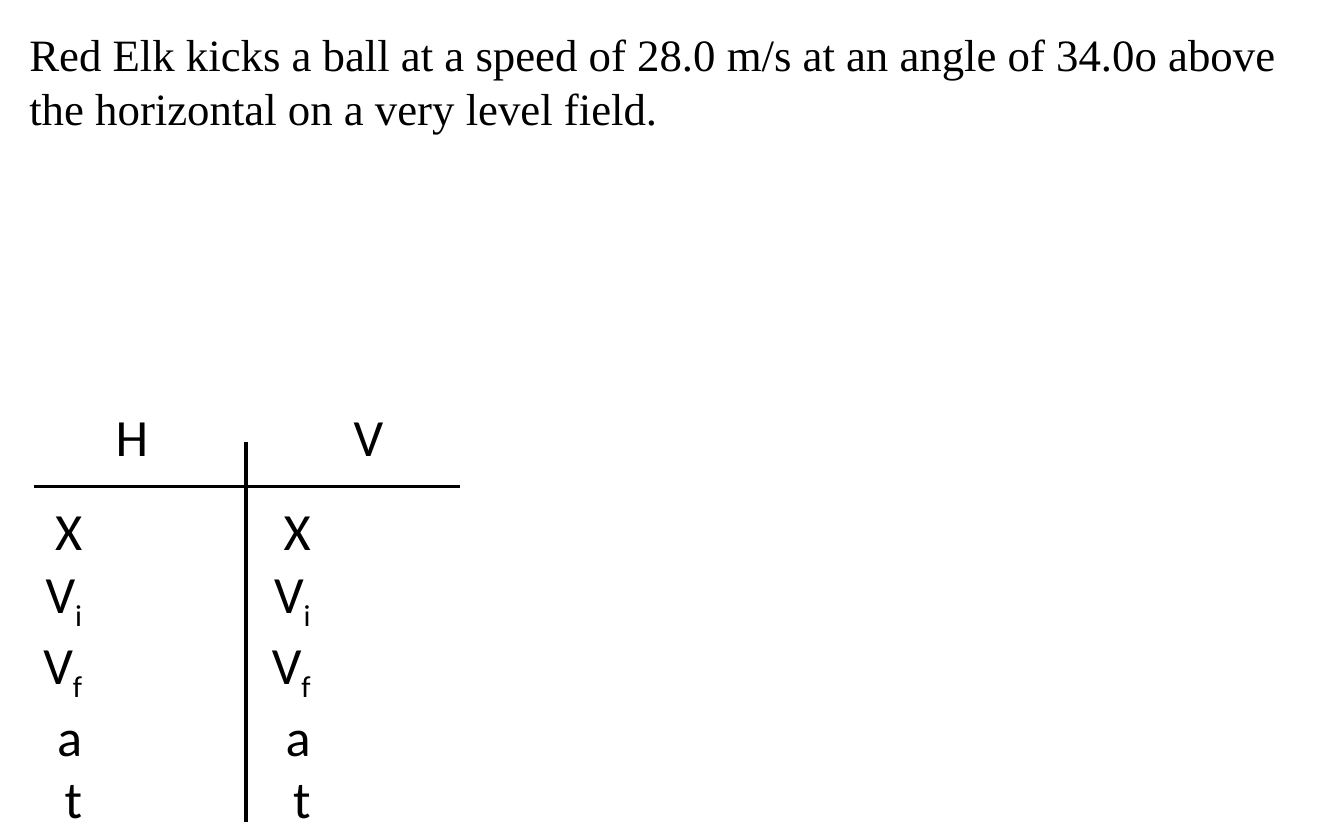
from lxml.etree import SubElement
from pptx import Presentation
from pptx.dml.color import RGBColor
from pptx.enum.shapes import MSO_CONNECTOR
from pptx.enum.text import MSO_AUTO_SIZE, PP_ALIGN
from pptx.oxml.ns import qn
from pptx.util import Inches, Pt

PROBLEM = ("Red Elk kicks a ball at a speed of 28.0 m/s at an angle of 34.0o "
           "above the horizontal on a very level field.")
# Each quantity is a symbol and its subscript
QUANTITIES = [("X", ""), ("V", "i"), ("V", "f"), ("a", ""), ("t", "")]


def paint(color_format, hex_color):
    color_format.rgb = RGBColor.from_string(hex_color)


class SlideWriter:
    ink = "000000"
    problem_font = {"name": "Times New Roman", "size": Pt(24)}
    symbol_font = {"name": "Calibri", "size": Pt(28)}
    line_width = Pt(2)

    def __init__(self, slide):
        self.slide = slide

    def run(self, paragraph, text, font_format, subscript=False):
        run = paragraph.add_run()
        run.text = text
        for attribute, value in font_format.items():
            setattr(run.font, attribute, value)
        paint(run.font.color, self.ink)
        if subscript:
            run._r.get_or_add_rPr().set("baseline", "-25000")

    def text(self, box, lines, font_format, align=PP_ALIGN.LEFT, wrap=False):
        """Write one paragraph for each (text, subscript) pair in lines."""
        frame = self.slide.shapes.add_textbox(*map(Inches, box)).text_frame
        frame_format = {"word_wrap": wrap,
                        "auto_size": MSO_AUTO_SIZE.SHAPE_TO_FIT_TEXT}
        for attribute, value in frame_format.items():
            setattr(frame, attribute, value)
        for index, (base, subscript) in enumerate(lines):
            paragraph = frame.add_paragraph() if index else frame.paragraphs[0]
            paragraph.alignment = align
            self.run(paragraph, base, font_format)
            if subscript:
                self.run(paragraph, subscript, font_format, subscript=True)

    def rule(self, start, end):
        rule = self.slide.shapes.add_connector(
            MSO_CONNECTOR.STRAIGHT, *map(Inches, start + end))
        rule.line.width = self.line_width
        paint(rule.line.color, self.ink)
        SubElement(rule._element.spPr, qn("a:effectLst"))


def main():
    presentation = Presentation()
    presentation.slide_width = Inches(10)
    presentation.slide_height = Inches(6.25)
    writer = SlideWriter(
        presentation.slides.add_slide(presentation.slide_layouts[6]))

    writer.text((0.12, 0.15, 9.57, 0.91), [(PROBLEM, "")],
                writer.problem_font, wrap=True)

    for left in (0.14, 1.84):
        writer.text((left, 3.66, 0.57, 2.46), QUANTITIES,
                    writer.symbol_font, PP_ALIGN.RIGHT)

    writer.rule((0.25, 3.62), (3.42, 3.62))
    writer.rule((1.83, 3.29), (1.83, 6.12))

    for heading, left in (("H", 0.71), ("V", 2.46)):
        writer.text((left, 2.96, 0.49, 0.57), [(heading, "")],
                    writer.symbol_font, PP_ALIGN.RIGHT)

    presentation.save("out.pptx")


if __name__ == "__main__":
    main()
